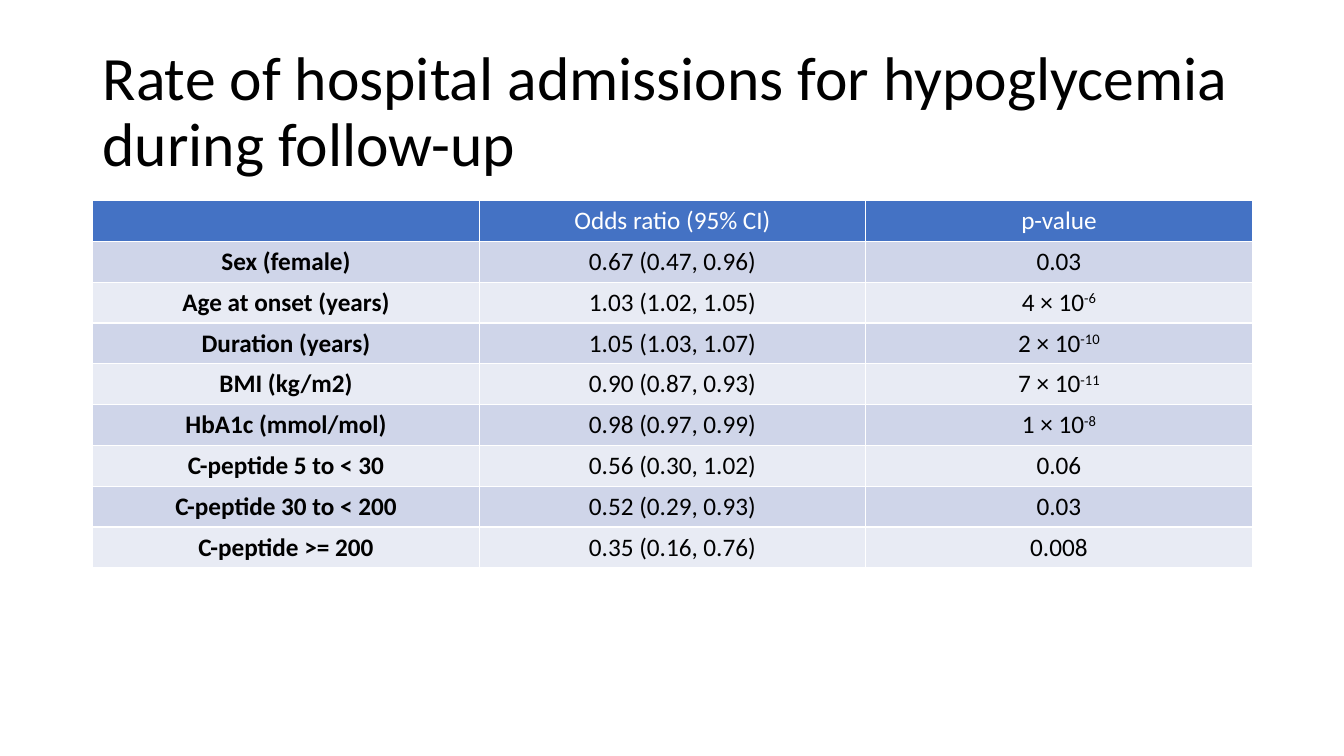
from lxml import etree
from pptx import Presentation
from pptx.dml.color import RGBColor as RGB
from pptx.enum.text import MSO_ANCHOR as Anchor, PP_ALIGN as Align
from pptx.oxml import parse_xml
from pptx.oxml.ns import nsdecls
from pptx.util import Inches, Pt


def write(frame, text, size=18, color="000000", bold=False, align=Align.LEFT, space=1.0):
    """Write text in one paragraph; whatever follows ^ is superscript."""
    para = frame.paragraphs[0]
    para.alignment = align
    para.line_spacing = space
    for i, part in enumerate(text.split("^")):
        run = para.add_run()
        run.text = part
        run.font.name = "Calibri"
        run.font.size = Pt(size)
        run.font.bold = bold
        run.font.color.rgb = RGB.from_string(color)
        if i:
            run.font._element.set("baseline", "30000")


def paint(cell, color):
    """Fill a cell and give it thin white borders."""
    cell.fill.solid()
    cell.fill.fore_color.rgb = RGB.from_string(color)
    props = cell._tc.get_or_add_tcPr()
    for i, side in enumerate("LRTB"):
        props.insert(i, parse_xml(
            f'<a:ln{side} {nsdecls("a")} w="12192"><a:solidFill>'
            f'<a:srgbClr val="FFFFFF"/></a:solidFill></a:ln{side}>'))


prs = Presentation()
prs.slide_width, prs.slide_height = Inches(13.33), Inches(7.5)
slide = prs.slides.add_slide(prs.slide_layouts[6])

# Title
title = slide.shapes.add_textbox(Inches(0.92), Inches(0.4), Inches(11.5), Inches(1.45))
frame = title.text_frame
frame.word_wrap = True
frame.vertical_anchor = Anchor.MIDDLE
write(frame, "Rate of hospital admissions for hypoglycemia during follow-up", size=44, space=0.9)

# Table of odds ratios
rows = [
    ("", "Odds ratio (95% CI)", "p-value"),
    ("Sex (female)", "0.67 (0.47, 0.96)", "0.03"),
    ("Age at onset (years)", "1.03 (1.02, 1.05)", "4 × 10^-6"),
    ("Duration (years)", "1.05 (1.03, 1.07)", "2 × 10^-10"),
    ("BMI (kg/m2)", "0.90 (0.87, 0.93)", "7 × 10^-11"),
    ("HbA1c (mmol/mol)", "0.98 (0.97, 0.99)", "1 × 10^-8"),
    ("C-peptide 5 to < 30", "0.56 (0.30, 1.02)", "0.06"),
    ("C-peptide 30 to < 200", "0.52 (0.29, 0.93)", "0.03"),
    ("C-peptide >= 200", "0.35 (0.16, 0.76)", "0.008"),
]
high = 0.405
table = slide.shapes.add_table(len(rows), 3, Inches(0.92), Inches(1.99),
                               Inches(11.5), Inches(high * len(rows))).table
for r, row in enumerate(rows):
    table.rows[r].height = Inches(high)
    fill = "4472C4" if r == 0 else ("E8EBF4", "CFD5E9")[r % 2]
    for c, text in enumerate(row):
        cell = table.cell(r, c)
        paint(cell, fill)
        if text:
            write(cell.text_frame, text, color="000000" if r else "FFFFFF",
                  bold=r > 0 and c == 0, align=Align.CENTER)

prs.save("out.pptx")
